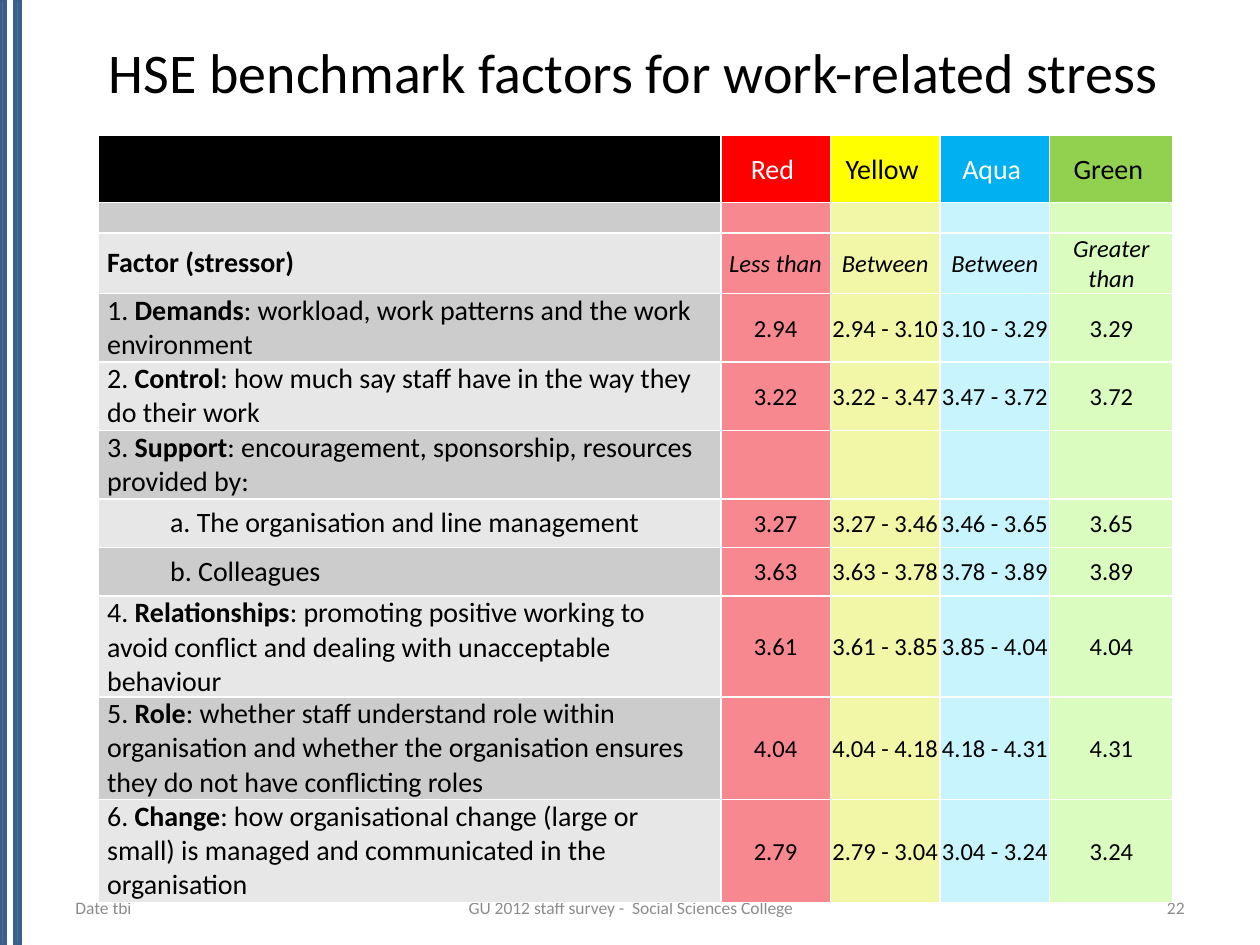
from pptx import Presentation
from pptx.dml.color import RGBColor
from pptx.enum.shapes import MSO_SHAPE
from pptx.enum.text import MSO_ANCHOR, PP_ALIGN
from pptx.util import Cm, Pt


def color(hex_string):
    return RGBColor.from_string(hex_string)


def style(paragraph, size, hex_string, align=PP_ALIGN.LEFT):
    paragraph.alignment = align
    paragraph.font.name = "Calibri"
    paragraph.font.size = Pt(size)
    paragraph.font.color.rgb = color(hex_string)


presentation = Presentation()
presentation.slide_width = Cm(25.4)
presentation.slide_height = Cm(19.05)
slide = presentation.slides.add_slide(presentation.slide_layouts[6])

# Stripes down the left edge
for left in (0, 0.3):
    stripe = slide.shapes.add_shape(
        MSO_SHAPE.RECTANGLE, Cm(left), Cm(0), Cm(0.1), presentation.slide_height)
    stripe.shadow.inherit = False
    stripe.fill.solid()
    stripe.fill.fore_color.rgb = color("427294")
    stripe.line.color.rgb = color("3A5F8C")
    stripe.line.width = Pt(2)

# Title and footer: text, left, top, width, height, size, colour, alignment
for text, left, top, width, height, size, text_color, align in (
    ("HSE benchmark factors for work-related stress",
     1.27, 0.33, 23.01, 2.21, 32, "000000", PP_ALIGN.CENTER),
    ("Date tbi", 1.27, 17.93, 5.92, 0.74, 10, "8C8C8C", PP_ALIGN.LEFT),
    ("GU 2012 staff survey -  Social Sciences College",
     8.69, 17.93, 8.05, 0.74, 10, "8C8C8C", PP_ALIGN.CENTER),
    ("22", 18.21, 17.93, 5.92, 0.74, 10, "8C8C8C", PP_ALIGN.RIGHT),
):
    box = slide.shapes.add_textbox(Cm(left), Cm(top), Cm(width), Cm(height))
    frame = box.text_frame
    frame.word_wrap = True
    frame.vertical_anchor = MSO_ANCHOR.MIDDLE
    frame.text = text
    style(frame.paragraphs[0], size, text_color, align)

# Benchmark table: height, factor as (plain, bold, plain), four band values
EMPTY = ("", "", "", "")
rows = [
    (1.35, ("", "", ""), ("Red ", "Yellow ", "Aqua ", "Green ")),
    (0.62, ("", "", ""), EMPTY),
    (1.22, ("", "Factor (stressor)", ""),
     ("Less than", "Between", "Between", "Greater than")),
    (1.38, ("1. ", "Demands", ": workload, work patterns and the work environment"),
     ("2.94", "2.94 - 3.10", "3.10 - 3.29", "3.29")),
    (1.38, ("2. ", "Control", ": how much say staff have in the way they do their work"),
     ("3.22", "3.22 - 3.47", "3.47 - 3.72", "3.72")),
    (1.38, ("3. ", "Support", ": encouragement, sponsorship, resources provided by:"),
     EMPTY),
    (0.98, ("\ta. The organisation and line management", "", ""),
     ("3.27", "3.27 - 3.46", "3.46 - 3.65", "3.65")),
    (0.98, ("\tb. Colleagues", "", ""),
     ("3.63", "3.63 - 3.78", "3.78 - 3.89", "3.89")),
    (1.46, ("4. ", "Relationships", ": promoting positive working to avoid conflict "
            "and dealing with unacceptable behaviour"),
     ("3.61", "3.61 - 3.85", "3.85 - 4.04", "4.04")),
    (2.07, ("5. ", "Role", ": whether staff understand role within organisation and "
            "whether the organisation ensures they do not have conflicting roles"),
     ("4.04", "4.04 - 4.18", "4.18 - 4.31", "4.31")),
    (2.07, ("6. ", "Change", ": how organisational change (large or small) is managed "
            "and communicated in the organisation"),
     ("2.79", "2.79 - 3.04", "3.04 - 3.24", "3.24")),
]
column_widths = (12.55, 2.21, 2.21, 2.21, 2.49)
header_fills = ("000000", "FF0000", "FFFF00", "00B0F0", "92D050")
header_text_colors = ("FFFFFF", "FFFFFF", "000000", "FFFFFF", "000000")
band_fills = ("F88890", "F1F7A7", "C7F4FD", "DAFDBF")
factor_fills = ("E7E7E7", "CCCCCC")
LABEL_ROW = 2

# The default table style supplies the white cell borders
table = slide.shapes.add_table(
    len(rows), len(column_widths), Cm(1.98), Cm(2.73),
    Cm(sum(column_widths)), Cm(sum(row[0] for row in rows))).table
for column, width in zip(table.columns, column_widths):
    column.width = Cm(width)

for row_index, (height, factor, bands) in enumerate(rows):
    table.rows[row_index].height = Cm(height)
    is_header = row_index == 0
    fills = header_fills if is_header else (factor_fills[row_index % 2], *band_fills)
    for column_index, fill in enumerate(fills):
        is_factor = column_index == 0
        cell = table.cell(row_index, column_index)
        cell.fill.solid()
        cell.fill.fore_color.rgb = color(fill)
        cell.vertical_anchor = MSO_ANCHOR.MIDDLE
        cell.margin_left = cell.margin_right = Cm(0.18 if is_factor else 0.03)
        cell.margin_top = Cm(0 if is_factor else 0.03)
        cell.margin_bottom = Cm(0)

        paragraph = cell.text_frame.paragraphs[0]
        style(paragraph, 16 if is_header or is_factor else 14,
              header_text_colors[column_index] if is_header else "000000",
              PP_ALIGN.LEFT if is_factor else PP_ALIGN.CENTER)
        parts = factor if is_factor else (bands[column_index - 1],)
        for part_index, text in enumerate(parts):
            if text:
                run = paragraph.add_run()
                run.text = text
                run.font.bold = part_index == 1
                run.font.italic = row_index == LABEL_ROW and not is_factor
        if not any(parts):
            # Keeps empty cells from stretching their row
            paragraph._p.get_or_add_endParaRPr().set("sz", "1200")

presentation.save("out.pptx")
